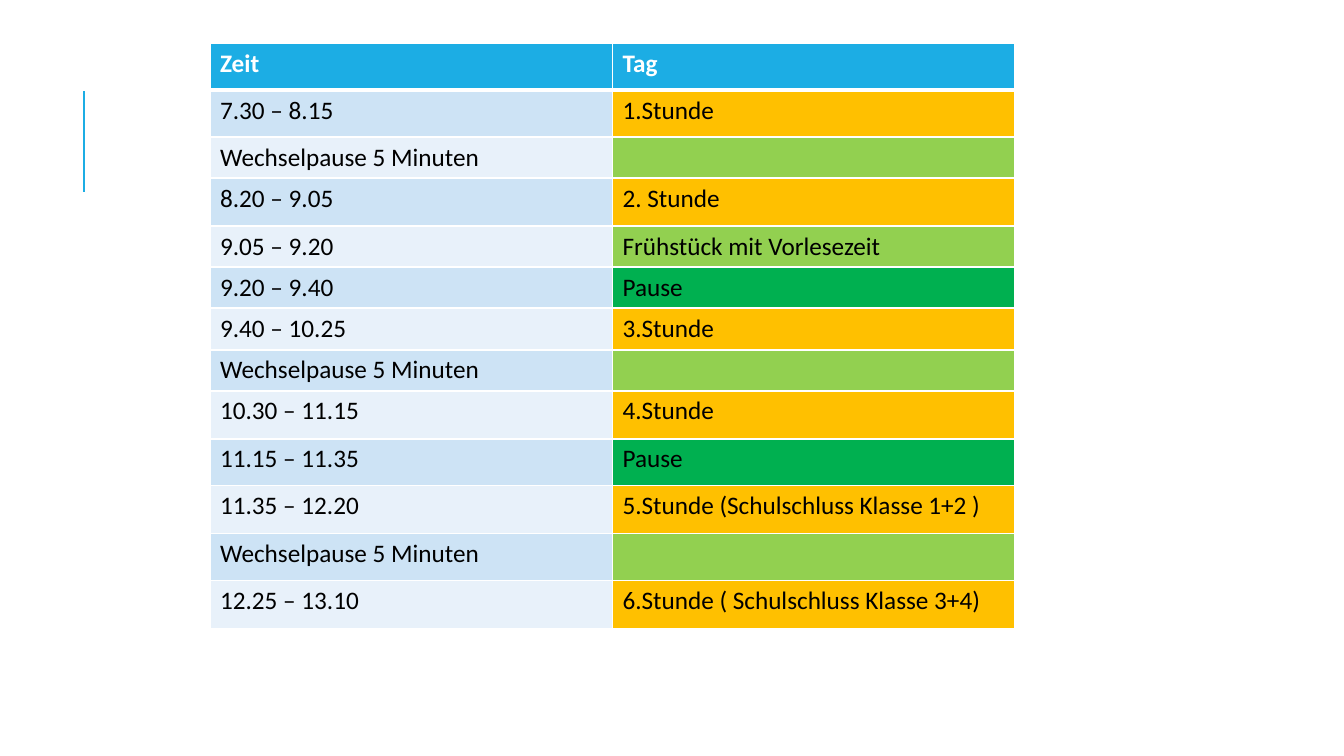
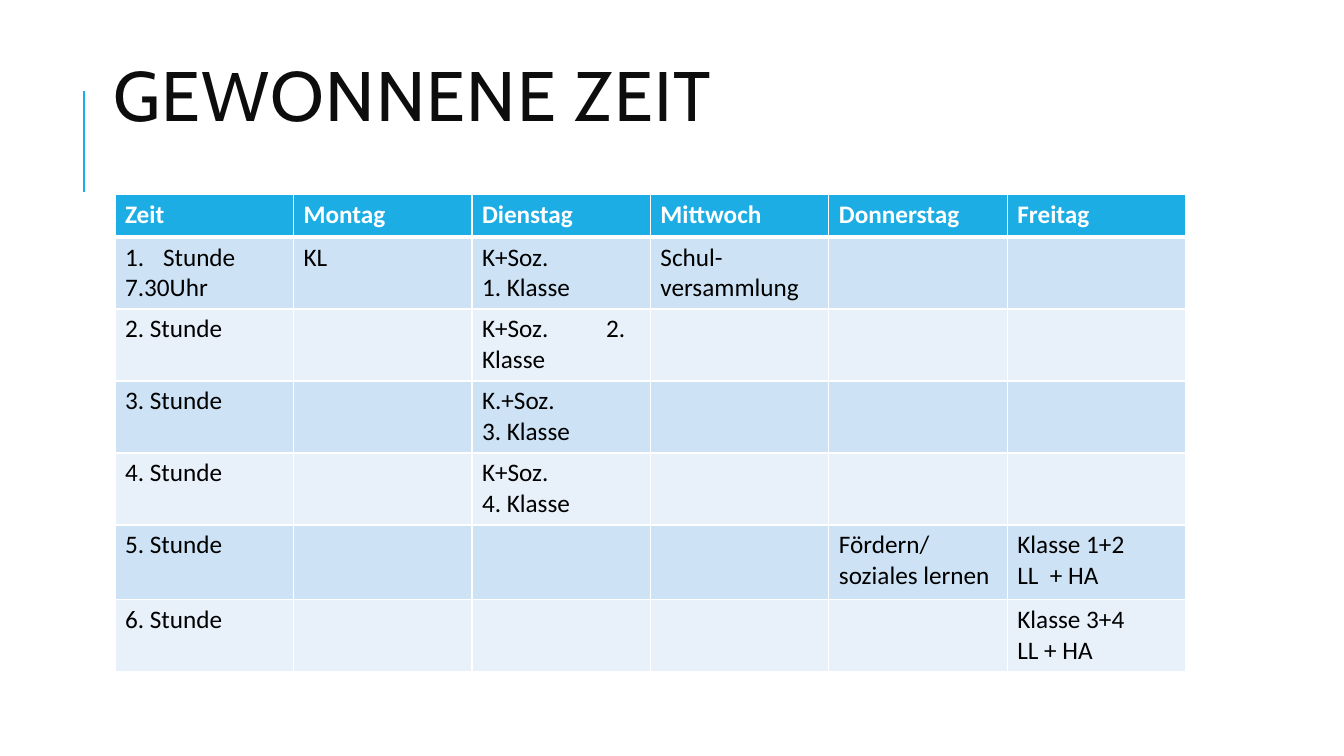
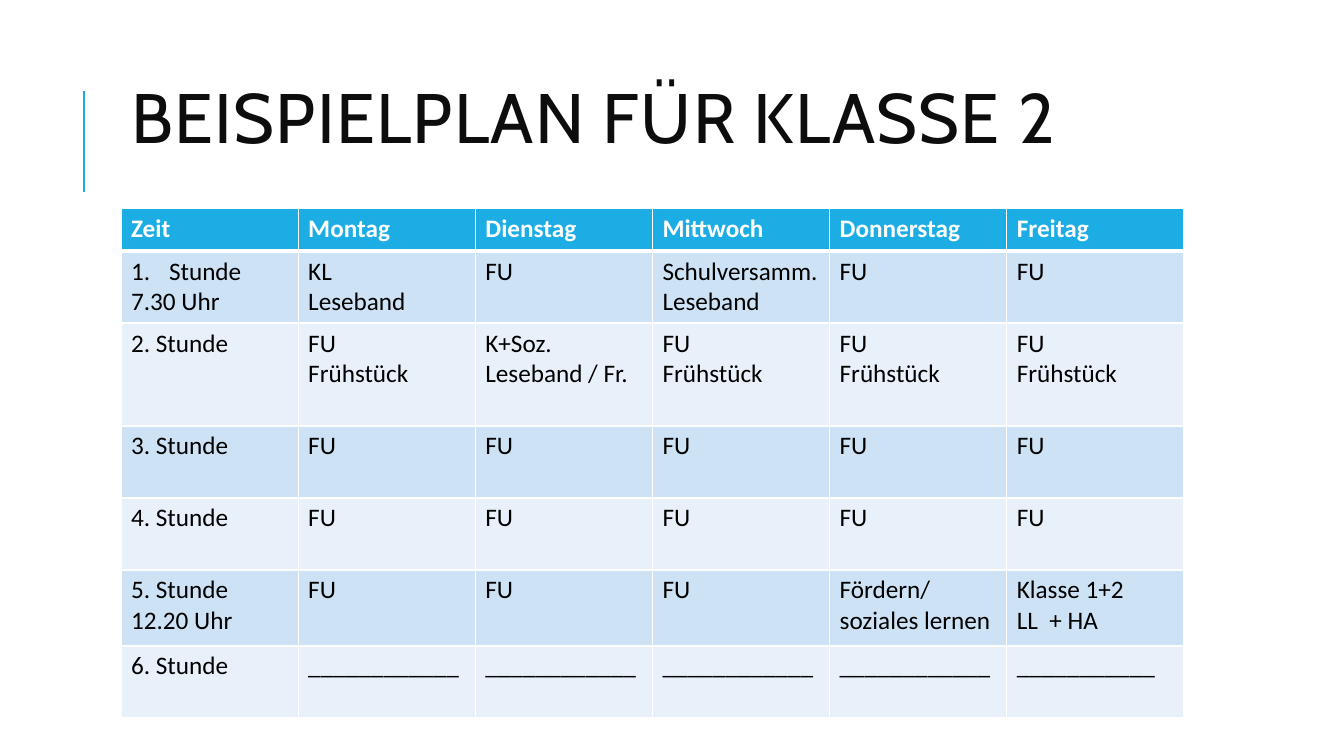
from dataclasses import dataclass

from lxml import etree
from pptx import Presentation
from pptx import util as u
from pptx.dml.color import RGBColor
from pptx.enum import shapes, text
from pptx.oxml import ns

PX_PER_INCH = 100.8
SLIDE_W, SLIDE_H = 1344, 756
TITLE_ONLY, BLANK = 5, 6

BLUE = RGBColor(0x1C, 0xAD, 0xE4)
BAND_DARK = RGBColor(0xCD, 0xE3, 0xF5)
BAND_LIGHT = RGBColor(0xE8, 0xF1, 0xFA)
LESSON = RGBColor(0xFF, 0xC0, 0x00)
SHORT_BREAK = RGBColor(0x92, 0xD0, 0x50)
LONG_BREAK = RGBColor(0x00, 0xB0, 0x50)
TITLE_INK = RGBColor(0x0D, 0x0D, 0x0D)
BLACK = RGBColor(0, 0, 0)
WHITE = RGBColor(0xFF, 0xFF, 0xFF)

TITLE_FONT, TABLE_FONT = "Cabin", "Calibri"
NUMBER_INDENT = 38
CLASS_TAB = 124


@dataclass(frozen=True)
class Box:
    left: int
    top: int
    width: int
    height: int


@dataclass(frozen=True)
class Period:
    time: str
    activity: str
    fill: RGBColor
    height: int


@dataclass(frozen=True)
class WeekPlan:
    title: str
    title_box: Box
    table_box: Box
    heights: list[int]
    lessons: list[list[str]]


DAY_BOX = Box(210, 43, 805, 586)
DAY_HEADER_HEIGHT = 47
DAY = [
    Period("7.30 – 8.15", "1.Stunde", LESSON, 47),
    Period("Wechselpause 5 Minuten", "", SHORT_BREAK, 41),
    Period("8.20 – 9.05", "2. Stunde", LESSON, 48),
    Period("9.05 – 9.20", "Frühstück mit Vorlesezeit", SHORT_BREAK, 41),
    Period("9.20 – 9.40", "Pause", LONG_BREAK, 41),
    Period("9.40 – 10.25", "3.Stunde", LESSON, 42),
    Period("Wechselpause 5 Minuten", "", SHORT_BREAK, 41),
    Period("10.30 – 11.15", "4.Stunde", LESSON, 48),
    Period("11.15 – 11.35", "Pause", LONG_BREAK, 47),
    Period("11.35 – 12.20", "5.Stunde (Schulschluss Klasse 1+2 )", LESSON, 48),
    Period("Wechselpause 5 Minuten", "", SHORT_BREAK, 47),
    Period("12.25 – 13.10", "6.Stunde ( Schulschluss Klasse 3+4)", LESSON, 48),
]

WEEK_HEADER = ["Zeit", "Montag", "Dienstag", "Mittwoch", "Donnerstag", "Freitag"]
SUPPORT = "Fördern/\nsoziales lernen"
JUNIOR_CARE = "Klasse 1+2\nLL  + HA"
BREAKFAST = "FU\nFrühstück"
NO_LESSON = "_" * 12

WEEK_PLANS = [
    WeekPlan(
        "GEWONNENE ZEIT",
        Box(103, 55, 1072, 92),
        Box(115, 194, 1071, 478),
        [43, 72, 72, 72, 72, 75, 72],
        [
            ["Stunde\n7.30Uhr", "KL", "K+Soz.\n1. Klasse", "Schul-versammlung", "", ""],
            ["2. Stunde", "", "K+Soz.\t2. Klasse", "", "", ""],
            ["3. Stunde", "", "K.+Soz.\n3. Klasse", "", "", ""],
            ["4. Stunde", "", "K+Soz.\n4. Klasse", "", "", ""],
            ["5. Stunde", "", "", "", SUPPORT, JUNIOR_CARE],
            ["6. Stunde", "", "", "", "", "Klasse 3+4\nLL + HA"],
        ],
    ),
    WeekPlan(
        "BEISPIELPLAN FÜR KLASSE 2",
        Box(121, 65, 1063, 116),
        Box(121, 208, 1063, 510),
        [43, 72, 103, 72, 72, 76, 72],
        [
            ["Stunde\n7.30 Uhr", "KL\nLeseband", "FU", "Schulversamm.\nLeseband", "FU", "FU"],
            ["2. Stunde", BREAKFAST, "K+Soz.\nLeseband / Fr.", BREAKFAST, BREAKFAST, BREAKFAST],
            ["3. Stunde"] + ["FU"] * 5,
            ["4. Stunde"] + ["FU"] * 5,
            ["5. Stunde\n12.20 Uhr", "FU", "FU", "FU", SUPPORT, JUNIOR_CARE],
            ["6. Stunde"] + [NO_LESSON] * 4 + [NO_LESSON[:-1]],
        ],
    ),
]


def px(length: float) -> u.Emu:
    return u.Emu(round(length * 914400 / PX_PER_INCH))


def place(box: Box) -> tuple:
    return px(box.left), px(box.top), px(box.width), px(box.height)


def add_accent(slide) -> None:
    accent = slide.shapes.add_connector(
        shapes.MSO_CONNECTOR.STRAIGHT, px(84), px(192), px(84), px(91)
    )
    accent.line.color.rgb = BLUE
    accent.line.width = u.Pt(1.5)
    etree.SubElement(accent._element.spPr, ns.qn("a:effectLst"))


def set_title(slide, wording: str, box: Box) -> None:
    title = slide.shapes.title
    title.left, title.top, title.width, title.height = place(box)
    frame = title.text_frame
    frame.text = wording
    frame.word_wrap = True
    frame.auto_size = text.MSO_AUTO_SIZE.NONE
    frame.vertical_anchor = text.MSO_ANCHOR.MIDDLE
    paragraph = frame.paragraphs[0]
    paragraph.alignment = text.PP_ALIGN.LEFT
    paragraph.line_spacing = 0.8
    run = paragraph.runs[0]
    run.font.name = TITLE_FONT
    run.font.size = u.Pt(50)
    run.font.color.rgb = TITLE_INK
    run.font._element.set("spc", "100")


def set_borders(cell, top: int, bottom: int) -> None:
    properties = cell._tc.get_or_add_tcPr()
    edges = [("lnL", 1), ("lnR", 1), ("lnT", top), ("lnB", bottom)]
    for position, (edge, points) in enumerate(edges):
        line = etree.Element(ns.qn(f"a:{edge}"), w=str(u.Pt(points)))
        solid = etree.SubElement(line, ns.qn("a:solidFill"))
        etree.SubElement(solid, ns.qn("a:srgbClr"), val=str(WHITE))
        properties.insert(position, line)


def set_tab(paragraph) -> None:
    stops = etree.SubElement(paragraph._p.get_or_add_pPr(), ns.qn("a:tabLst"))
    etree.SubElement(stops, ns.qn("a:tab"), pos=str(px(CLASS_TAB)), algn="l")


def set_number(paragraph) -> None:
    properties = paragraph._p.get_or_add_pPr()
    properties.set("marL", str(px(NUMBER_INDENT)))
    properties.set("indent", str(px(-NUMBER_INDENT)))
    etree.SubElement(properties, ns.qn("a:buAutoNum"), type="arabicPeriod")


def fill_cell(cell, wording: str, fill: RGBColor, row: int) -> None:
    header = row == 0
    cell.fill.solid()
    cell.fill.fore_color.rgb = fill
    set_borders(cell, top=3 if row == 1 else 1, bottom=3 if header else 1)
    cell.text_frame.text = wording
    for paragraph in cell.text_frame.paragraphs:
        paragraph.font.size = u.Pt(18)
        if "\t" in paragraph.text:
            set_tab(paragraph)
        for run in paragraph.runs:
            run.font.name = TABLE_FONT
            run.font.size = u.Pt(18)
            run.font.bold = header
            run.font.color.rgb = WHITE if header else BLACK


def row_fill(row: int) -> RGBColor:
    if row == 0:
        return BLUE
    return BAND_DARK if row % 2 else BAND_LIGHT


def add_plan(slide, box: Box, heights: list[int], rows: list[list[str]]):
    plan = slide.shapes.add_table(len(rows), len(rows[0]), *place(box)).table
    plan.horz_banding = False
    for column in plan.columns:
        column.width = px(box.width / len(rows[0]))
    for row, (height, wordings) in enumerate(zip(heights, rows)):
        plan.rows[row].height = px(height)
        for column, wording in enumerate(wordings):
            fill_cell(plan.cell(row, column), wording, row_fill(row), row)
    return plan


def add_day_slide(prs) -> None:
    slide = prs.slides.add_slide(prs.slide_layouts[BLANK])
    add_accent(slide)
    heights = [DAY_HEADER_HEIGHT] + [period.height for period in DAY]
    rows = [["Zeit", "Tag"]] + [[period.time, period.activity] for period in DAY]
    plan = add_plan(slide, DAY_BOX, heights, rows)
    for row, period in enumerate(DAY, start=1):
        plan.cell(row, 1).fill.fore_color.rgb = period.fill


def add_week_slide(prs, week: WeekPlan) -> None:
    slide = prs.slides.add_slide(prs.slide_layouts[TITLE_ONLY])
    add_accent(slide)
    set_title(slide, week.title, week.title_box)
    plan = add_plan(slide, week.table_box, week.heights, [WEEK_HEADER] + week.lessons)
    set_number(plan.cell(1, 0).text_frame.paragraphs[0])


def main() -> None:
    prs = Presentation()
    prs.slide_width, prs.slide_height = px(SLIDE_W), px(SLIDE_H)
    add_day_slide(prs)
    for week in WEEK_PLANS:
        add_week_slide(prs, week)
    prs.save("out.pptx")


if __name__ == "__main__":
    main()
